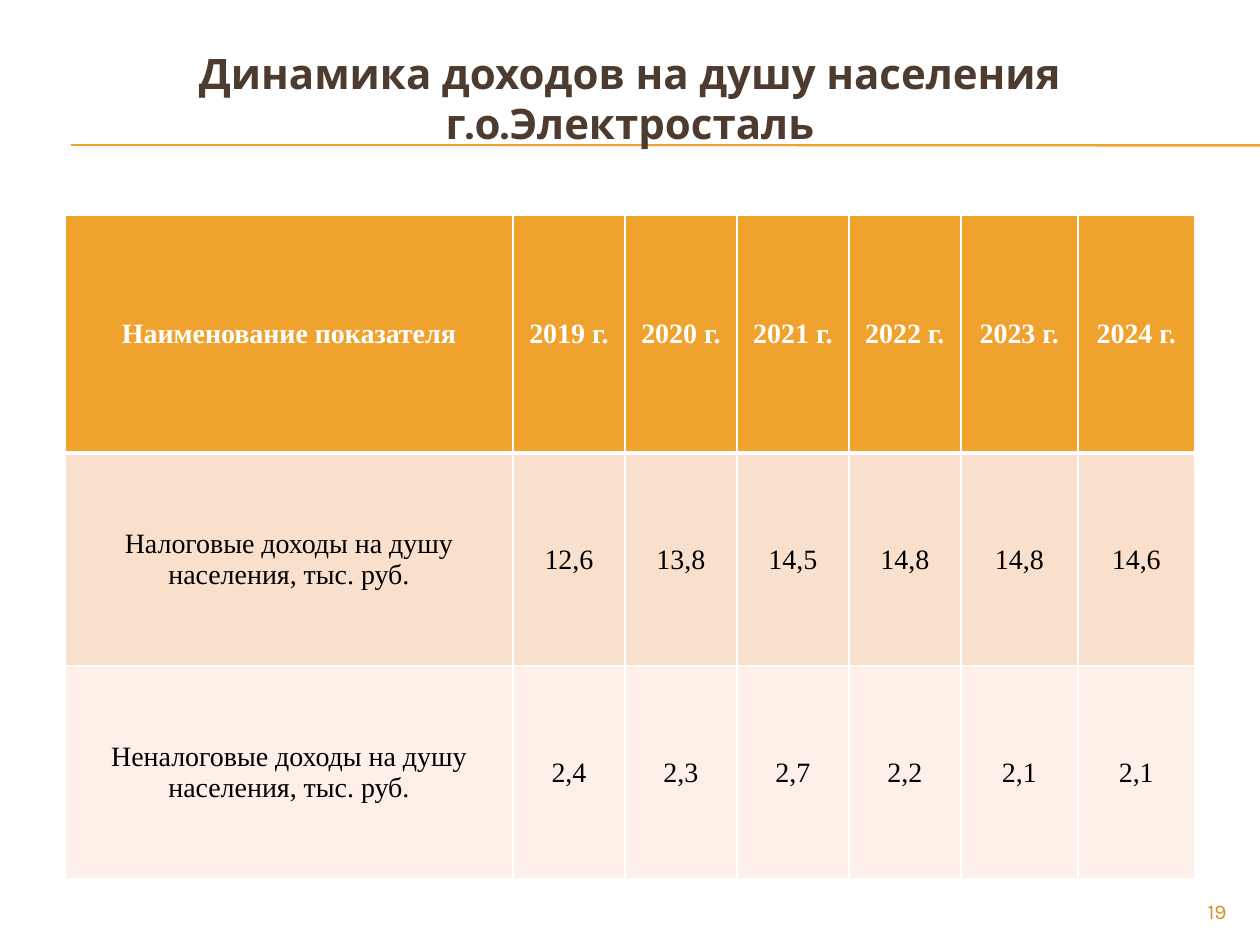
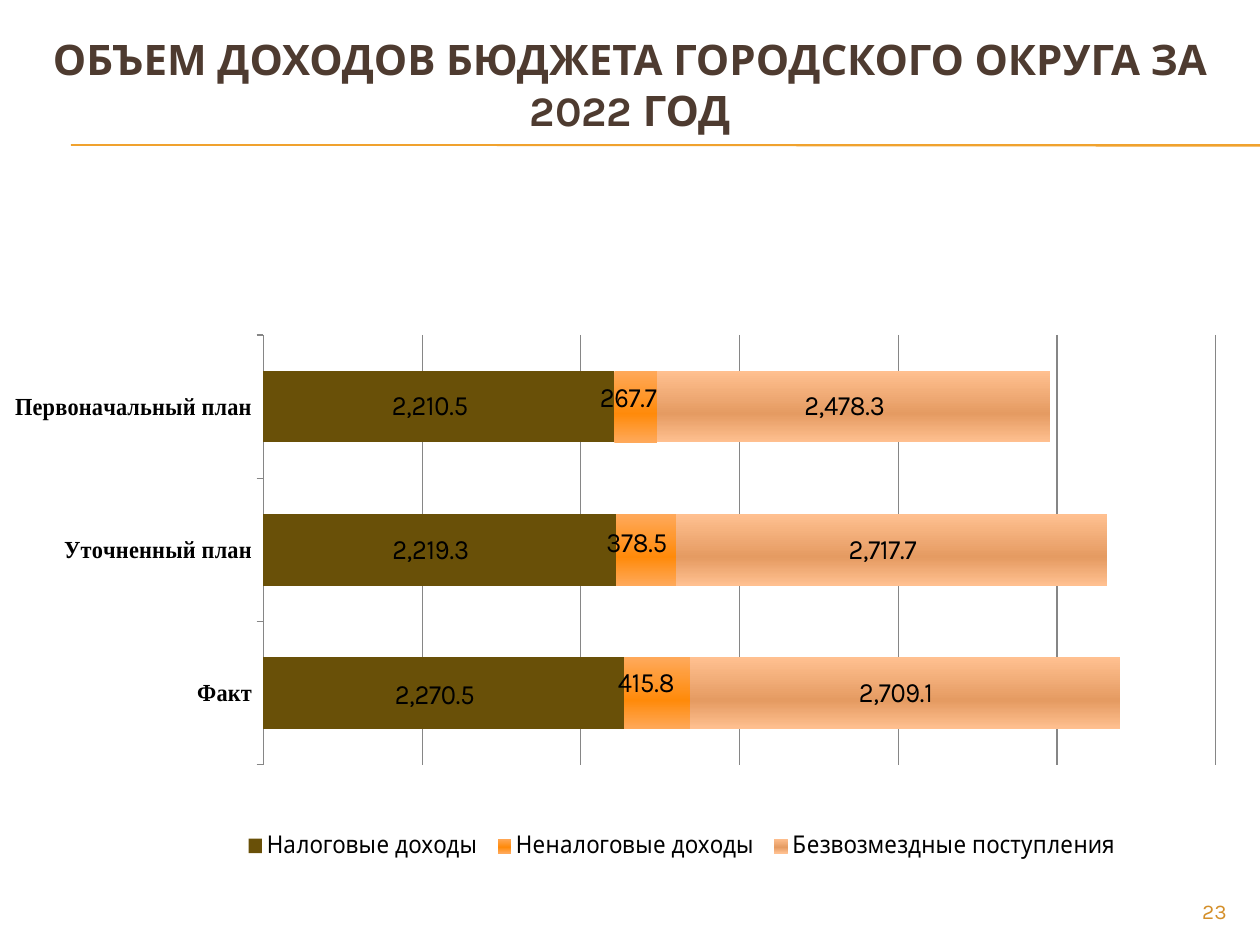
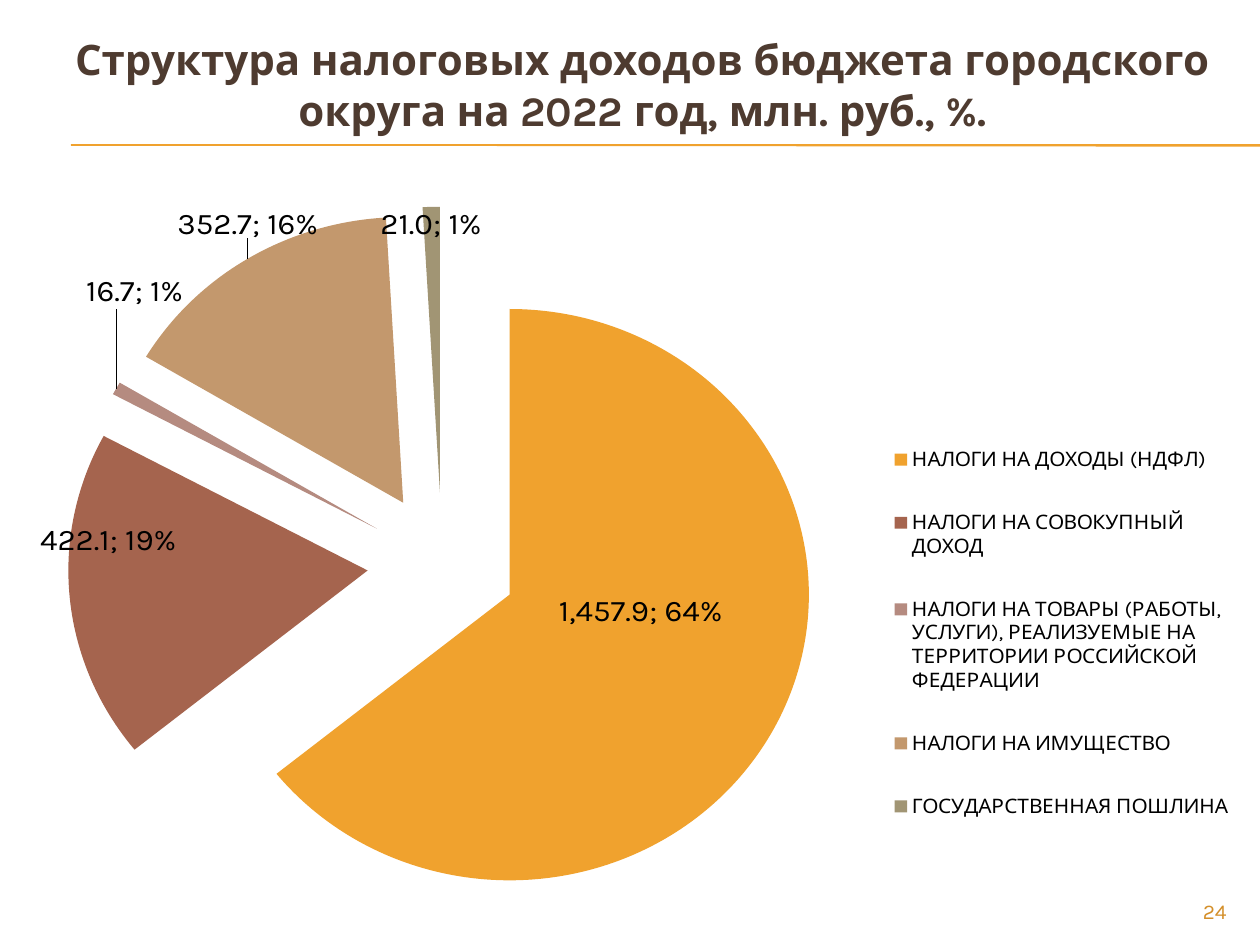
from lxml import etree
from pptx import Presentation
from pptx.chart.data import CategoryChartData
from pptx.dml.color import RGBColor
from pptx.enum.chart import XL_CHART_TYPE as CT, XL_LABEL_POSITION as LP
from pptx.enum.chart import XL_LEGEND_POSITION as LEG, XL_TICK_MARK as TICK
from pptx.enum.chart import XL_TICK_LABEL_POSITION as TL
from pptx.enum.shapes import MSO_CONNECTOR
from pptx.enum.text import MSO_ANCHOR as ANCHOR, MSO_AUTO_SIZE, PP_ALIGN as ALIGN
from pptx.oxml import parse_xml
from pptx.oxml.ns import nsdecls, qn
from pptx.util import Emu, Pt

# Shared look
SANS, SERIF = "Karla", "Times New Roman"
ORANGE, BROWN, OUTLINE, NUMBER = "F0A22E", "4E3B30", "563928", "D48F29"
WHITE, BLACK, GREY = "FFFFFF", "000000", "868686"
BANDS = ["F9E0CD", "FCF0E8"]
PIE_COLOURS = [ORANGE, "A5644E", "B58B80", "C3986D", "A19574"]
NUM_FMT = "#,##0.0"
MONEY_FMT = r"_-* #,##0.0\ _₽_-"


def px(n):
    return Emu(round(n * 914400 / 126))


def box(*lengths):
    return [px(n) for n in lengths]


def rgb(value):
    return RGBColor.from_string(value)


def style(font, size, colour=BLACK, name=SANS, bold=False):
    font.size, font.name, font.bold = Pt(size), name, bold
    font.color.rgb = rgb(colour)


def add_run(p, text, align, *font_style, **options):
    p.alignment = align
    r = p.add_run()
    r.text = text
    style(r.font, *font_style, **options)
    return r


# Slide frame: title, rules, page number
def add_title(slide, text, place, anchor):
    sp = slide.shapes.title
    sp.left, sp.top, sp.width, sp.height = box(*place)
    tf = sp.text_frame
    tf.word_wrap, tf.auto_size = True, MSO_AUTO_SIZE.NONE
    tf.vertical_anchor = anchor
    r = add_run(tf.paragraphs[0], text, ALIGN.CENTER, 24, BROWN, bold=True)
    r.font._element.insert(0, parse_xml(
        f'<a:ln {nsdecls("a")} w="12700"><a:solidFill>'
        f'<a:srgbClr val="{OUTLINE}"/></a:solidFill></a:ln>'))


def add_layout_rules(slide):
    """Draw the two rules and move them to the layout, behind every title."""
    for end_y in (145, 146):
        line = slide.shapes.add_connector(
            MSO_CONNECTOR.STRAIGHT, *box(71, 145, 1260, end_y))
        line.line.color.rgb = rgb(ORANGE)
        line.line.width = Pt(0.75)
        etree.SubElement(line._element.spPr, qn("a:effectLst"))
        slide.slide_layout.shapes._spTree.append(line._element)


def add_page_number(slide, number):
    tf = slide.shapes.add_textbox(*box(1134, 892, 105, 34)).text_frame
    tf.word_wrap = True
    add_run(tf.paragraphs[0], str(number), ALIGN.RIGHT, 12, NUMBER)


def add_slide(prs, title, number, place, anchor=ANCHOR.MIDDLE):
    slide = prs.slides.add_slide(prs.slide_layouts[5])
    add_title(slide, title, place, anchor)
    add_page_number(slide, number)
    return slide


# Table
def set_borders(cell, bottom):
    for side in "LRTB":
        width = Pt(bottom if side == "B" else 1)
        cell._tc.get_or_add_tcPr().append(parse_xml(
            f'<a:ln{side} {nsdecls("a")} w="{width}"><a:solidFill>'
            f'<a:srgbClr val="{WHITE}"/></a:solidFill></a:ln{side}>'))


def fill_cell(cell, text, header, fill, tight):
    set_borders(cell, 3 if header else 1)
    cell.fill.solid()
    cell.fill.fore_color.rgb = rgb(fill)
    cell.vertical_anchor = ANCHOR.MIDDLE
    if tight:
        cell.margin_left = cell.margin_right = cell.margin_top = px(1)
        cell.margin_bottom = 0
    add_run(cell.text_frame.paragraphs[0], text, ALIGN.CENTER, 16,
            WHITE if header else BLACK, SERIF, header)


def add_table(slide, rows, place, widths, heights):
    table = slide.shapes.add_table(len(rows), len(rows[0]), *box(*place)).table
    for col, width in zip(table.columns, widths):
        col.width = px(width)
    for i, (values, height) in enumerate(zip(rows, heights)):
        table.rows[i].height = px(height)
        fill = BANDS[(i - 1) % 2] if i else ORANGE
        for j, text in enumerate(values):
            fill_cell(table.cell(i, j), text, i == 0, fill, i > 0 and j > 0)


# Charts
def make_layout(frame, place, target=""):
    """Place a chart part, given in px inside the chart frame."""
    sizes = "".join(f'<c:{k} val="{v / whole:.4f}"/>'
                    for k, v, whole in zip("xywh", place, frame[2:] * 2))
    return parse_xml(
        f'<c:layout {nsdecls("c")}><c:manualLayout>{target}'
        f'<c:xMode val="edge"/><c:yMode val="edge"/>{sizes}'
        '</c:manualLayout></c:layout>')


def add_chart(slide, kind, frame, cats, series, plot):
    data = CategoryChartData(number_format=NUM_FMT)
    data.categories = cats
    for name, values in series:
        data.add_series(name, values)
    chart = slide.shapes.add_chart(kind, *box(*frame), data).chart
    chart.has_title = False
    style(chart.font, 18)
    area = chart._chartSpace.chart.plotArea
    for old in area.findall(qn("c:layout")):
        area.remove(old)
    area.insert(0, make_layout(frame, plot, '<c:layoutTarget val="inner"/>'))
    return chart


def add_legend(chart, position, size, frame, place):
    chart.has_legend = True
    legend = chart.legend
    legend.position, legend.include_in_layout = position, False
    style(legend.font, size)
    el = legend._element
    for old in el.findall(qn("c:layout")):
        el.remove(old)
    el.find(qn("c:legendPos")).addnext(make_layout(frame, place))


def add_separator(label):
    mark = parse_xml(f'<c:separator {nsdecls("c")}>; </c:separator>')
    label.findall(qn("c:showBubbleSize"))[-1].addnext(mark)


def add_labels(series, size, position, fmt, percent=False):
    labels = series.data_labels
    labels.show_value, labels.show_percentage = True, percent
    labels.number_format, labels.number_format_is_linked = fmt, percent
    labels.position = position
    style(labels.font, size)
    add_separator(labels._element)


def move_labels(series, size, position, fmt, shifts, frame, percent=False):
    for i, (dx, dy) in shifts.items():
        label = series.points[i].data_label
        style(label.font, size)
        label.position = position
        el = series.data_labels._element.xpath(f'c:dLbl[c:idx/@val="{i}"]')[0]
        el.find(qn("c:txPr")).find(qn("a:bodyPr")).set("wrap", "none")
        el.find(qn("c:showPercent")).set("val", str(int(percent)))
        add_separator(el)
        idx = el.find(qn("c:idx"))
        idx.addnext(parse_xml(f'<c:numFmt {nsdecls("c")} formatCode="{fmt}" '
                              f'sourceLinked="{int(percent)}"/>'))
        idx.addnext(parse_xml(
            f'<c:layout {nsdecls("c")}><c:manualLayout>'
            f'<c:x val="{dx / frame[2]:.4f}"/><c:y val="{dy / frame[3]:.4f}"/>'
            '</c:manualLayout></c:layout>'))


def fill_gradient(fmt, edge, middle):
    fmt.fill.solid()
    solid = fmt._element.spPr.find(qn("a:solidFill"))
    stops = "".join(f'<a:gs pos="{pos}"><a:srgbClr val="{c}"/></a:gs>'
                    for pos, c in ((0, edge), (60000, middle), (100000, edge)))
    solid.getparent().replace(solid, parse_xml(
        f'<a:gradFill {nsdecls("a")}><a:gsLst>{stops}</a:gsLst>'
        '<a:lin ang="5400000" scaled="0"/></a:gradFill>'))


def style_bar_axes(chart):
    cat, val = chart.category_axis, chart.value_axis
    style(cat.tick_labels.font, 14, name=SERIF, bold=True)
    cat.major_tick_mark = TICK.OUTSIDE
    cat.tick_label_position = TL.NEXT_TO_AXIS
    val.visible = False
    val.minimum_scale, val.maximum_scale, val.major_unit = 0, 6000, 1000
    val.has_major_gridlines = True
    for line in (cat.format.line, val.major_gridlines.format.line):
        line.color.rgb = rgb(GREY)
        line.width = Pt(0.75)


def add_income_bars(slide):
    frame = (15, 224, 1230, 651)
    chart = add_chart(
        slide, CT.BAR_STACKED, frame,
        ["Факт", "Уточненный план", "Первоначальный план"],
        [("Налоговые доходы", (2270.5, 2219.3, 2210.5)),
         ("Неналоговые доходы", (415.8, 378.5, 267.7)),
         ("Безвозмездные поступления", (2709.1, 2717.7, 2478.3))],
        (152, 111, 1046, 430))
    add_legend(chart, LEG.BOTTOM, 14, frame, (122, 593, 980, 60))
    plot = chart.plots[0]
    plot.gap_width, plot.overlap, plot.vary_by_categories = 100, 100, False
    style_bar_axes(chart)
    tax, other, grants = plot.series
    tax.format.fill.solid()
    tax.format.fill.fore_color.rgb = rgb("695008")
    fill_gradient(other.format, "FFA95A", "FF8A0A")
    fill_gradient(grants.format, "FFC090", "E59B62")
    for s in plot.series:
        add_labels(s, 16, LP.CENTER, MONEY_FMT)
    move_labels(tax, 16, LP.CENTER, MONEY_FMT, {0: (0, 2)}, frame)
    move_labels(other, 16, LP.CENTER, MONEY_FMT,
                {0: (-2, -10), 1: (0, -7), 2: (2, -8)}, frame)


def add_tax_pie(slide):
    frame = (-74, 165, 1334, 794)
    chart = add_chart(
        slide, CT.PIE, frame,
        ["НАЛОГИ НА ДОХОДЫ (НДФЛ)", "НАЛОГИ НА СОВОКУПНЫЙ ДОХОД",
         "НАЛОГИ НА ТОВАРЫ (РАБОТЫ, УСЛУГИ), РЕАЛИЗУЕМЫЕ НА ТЕРРИТОРИИ "
         "РОССИЙСКОЙ ФЕДЕРАЦИИ",
         "НАЛОГИ НА ИМУЩЕСТВО", "ГОСУДАРСТВЕННАЯ ПОШЛИНА"],
        [("Series 1", (1457.9, 422.1, 16.7, 352.7, 21))],
        (99, 0, 822, 754))
    add_legend(chart, LEG.RIGHT, 12, frame, (954, 213, 360, 474))
    chart.plots[0].vary_by_categories = True
    taxes = chart.plots[0].series[0]
    taxes._element.get_or_add_spPr().addnext(
        parse_xml(f'<c:explosion {nsdecls("c")} val="25"/>'))
    for i, colour in enumerate(PIE_COLOURS):
        fill = taxes.points[i].format.fill
        fill.solid()
        fill.fore_color.rgb = rgb(colour)
    add_labels(taxes, 18, LP.OUTSIDE_END, NUM_FMT, percent=True)
    move_labels(taxes, 18, LP.OUTSIDE_END, NUM_FMT,
                {0: (-229, -134), 1: (115, -79), 2: (74, -80), 3: (75, -15)},
                frame, percent=True)


def main():
    prs = Presentation()
    prs.slide_width, prs.slide_height = box(1260, 945)

    # Income per head
    slide = add_slide(prs, "Динамика доходов на душу населения г.о.Электросталь",
                      19, (0, 41, 1260, 114), ANCHOR.TOP)
    add_layout_rules(slide)
    rows = [
        ["Наименование показателя"] + [f"{year} г." for year in range(2019, 2025)],
        ["Налоговые доходы на душу населения, тыс. руб.",
         "12,6", "13,8", "14,5", "14,8", "14,8", "14,6"],
        ["Неналоговые доходы на душу населения, тыс. руб.",
         "2,4", "2,3", "2,7", "2,2", "2,1", "2,1"],
    ]
    add_table(slide, rows, (65, 215, 1130, 664),
              [448] + [112] * 4 + [117] * 2, [238, 213, 213])

    # Budget income, plan and fact
    slide = add_slide(prs, "ОБЪЕМ ДОХОДОВ БЮДЖЕТА ГОРОДСКОГО ОКРУГА ЗА 2022 ГОД",
                      23, (0, 26, 1260, 116))
    add_income_bars(slide)

    # Tax income by kind
    slide = add_slide(prs, "Структура налоговых доходов бюджета городского округа "
                      "на 2022 год, млн. руб., %.", 24, (44, 26, 1197, 116))
    add_tax_pie(slide)

    prs.save("out.pptx")


if __name__ == "__main__":
    main()
